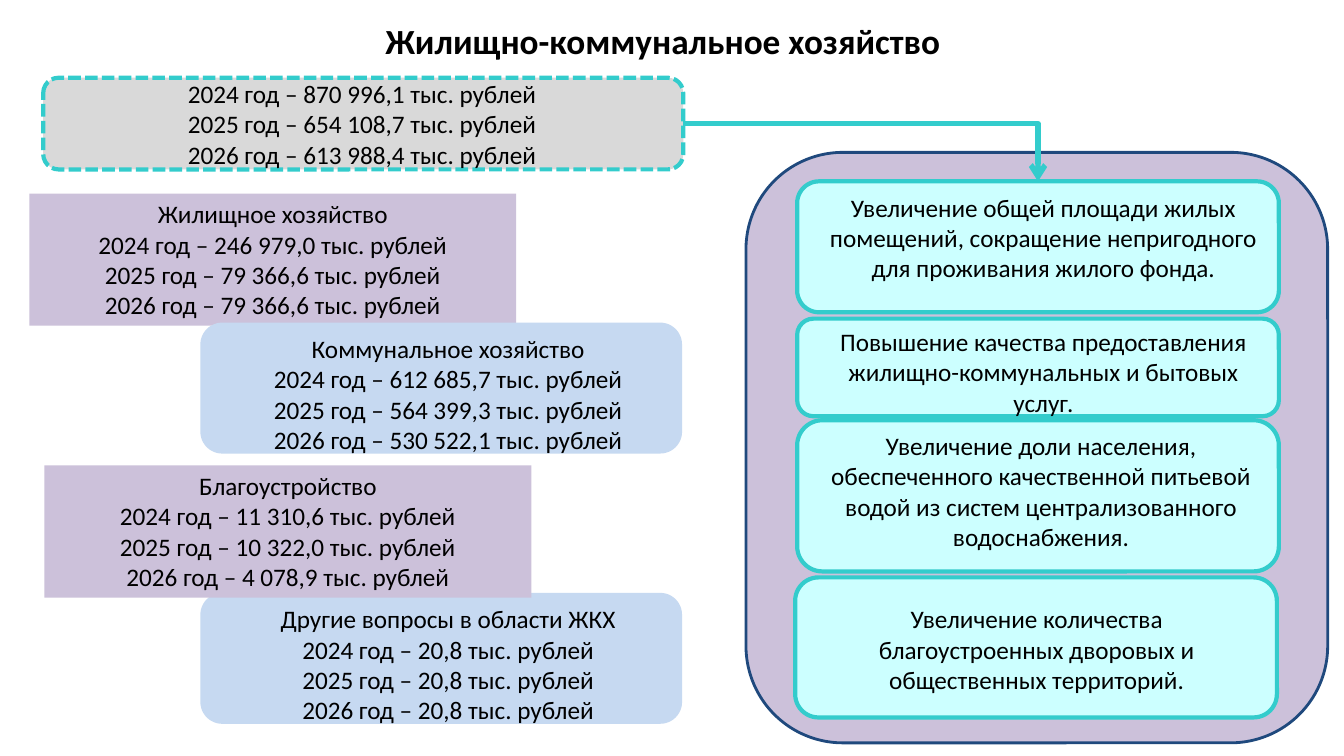
from dataclasses import dataclass

from lxml.etree import SubElement
from pptx import Presentation
from pptx.dml.color import RGBColor
from pptx.enum.dml import MSO_LINE
from pptx.enum.shapes import MSO_CONNECTOR, MSO_SHAPE
from pptx.enum.text import MSO_ANCHOR, PP_ALIGN
from pptx.oxml.ns import qn
from pptx.shapes.autoshape import Shape
from pptx.slide import Slide
from pptx.text.text import TextFrame
from pptx.util import Cm, Pt

FONT = "Calibri"
BLACK, GREY, TEAL, AQUA = "000000", "D9D9D9", "33CCCC", "CCFFFF"
LILAC, BLUE, NAVY = "CCC1DA", "C6D9F1", "1F497D"
ROUND, RECT = MSO_SHAPE.ROUNDED_RECTANGLE, MSO_SHAPE.RECTANGLE
CARD_W, CARD_H = 12.14, 3.3
SUM_W, SUM_H = 12.27, 3.33
GOAL_X, SECTOR_X, SECTOR_TEXT_X = 20.09, 5.05, 5.16


@dataclass(frozen=True)
class Box:
    """A block in centimetres; without a fill it is a plain text box."""
    left: float
    top: float
    wide: float
    high: float
    rows: tuple[str, ...] = ()
    fill: str = ""
    edge: str = ""
    form: MSO_SHAPE = ROUND
    thick: float = 3
    dash: bool = False


def color(code: str) -> RGBColor:
    return RGBColor.from_string(code)


def sums(*costs: str) -> tuple[str, ...]:
    """One line for each budget year."""
    return tuple(f"{year} год – {cost} тыс. рублей"
                 for year, cost in enumerate(costs, 2024))


def write(frame: TextFrame, rows: tuple[str, ...], size: float = 18,
          bold: bool = False) -> None:
    frame.word_wrap = True
    for i, row in enumerate(rows):
        para = frame.paragraphs[0] if i == 0 else frame.add_paragraph()
        para.alignment = PP_ALIGN.CENTER
        run = para.add_run()
        run.text = row
        run.font.name, run.font.size, run.font.bold = FONT, Pt(size), bold
        run.font.color.rgb = color(BLACK)


def draw(slide: Slide, box: Box) -> Shape:
    place = [Cm(n) for n in (box.left, box.top, box.wide, box.high)]
    if box.fill:
        shape = slide.shapes.add_shape(box.form, *place)
        shape.shadow.inherit = False
        shape.fill.solid()
        shape.fill.fore_color.rgb = color(box.fill)
        if box.edge:
            shape.line.color.rgb = color(box.edge)
            shape.line.width = Pt(box.thick)
            if box.dash:
                shape.line.dash_style = MSO_LINE.SQUARE_DOT
        else:
            shape.line.fill.background()
    else:
        shape = slide.shapes.add_textbox(*place)
    if box.rows:
        shape.text_frame.vertical_anchor = MSO_ANCHOR.TOP
        write(shape.text_frame, box.rows)
    return shape


def link(slide: Slide, start: Shape, end: Shape) -> None:
    """Arrow with one bend, from the right side of start to the top of end."""
    arrow = slide.shapes.add_connector(MSO_CONNECTOR.ELBOW, 0, 0, 0, 0)
    arrow.begin_connect(start, 3)
    arrow.end_connect(end, 0)
    arrow.line.color.rgb = color(TEAL)
    arrow.line.width = Pt(3.75)
    props = arrow.element.spPr
    props.find(qn("a:prstGeom")).set("prst", "bentConnector2")
    SubElement(props.find(qn("a:ln")), qn("a:tailEnd"), type="arrow")
    SubElement(props, qn("a:effectLst"))


PANEL = Box(18.8, 3.84, 14.66, 14.88, fill=LILAC, edge=NAVY, thick=2)
TOTAL = Box(1.09, 1.96, 16.13, 2.31, fill=GREY, edge=TEAL, dash=True)
GOAL = Box(GOAL_X, 4.57, CARD_W, CARD_H, fill=AQUA, edge=TEAL)
PARTS = (
    Box(2.84, 1.85, 12.57, 2.57, sums("870 996,1", "654 108,7", "613 988,4")),
    Box(0.74, 4.88, SUM_W, SUM_H,
        ("Жилищное хозяйство", *sums("246 979,0", "79 366,6", "79 366,6")),
        LILAC, form=RECT),
    Box(SECTOR_X, 8.13, CARD_W, CARD_H, fill=BLUE),
    Box(SECTOR_X, 14.94, CARD_W, CARD_H, fill=BLUE),
    Box(SECTOR_TEXT_X, 8.28, SUM_W, SUM_H,
        ("Коммунальное хозяйство",
         *sums("612 685,7", "564 399,3", "530 522,1"))),
    Box(1.12, 11.73, SUM_W, SUM_H,
        ("Благоустройство", *sums("11 310,6", "10 322,0", "4 078,9")),
        LILAC, form=RECT),
    Box(SECTOR_TEXT_X, 15.09, SUM_W, SUM_H,
        ("Другие вопросы в области ЖКХ", *sums("20,8", "20,8", "20,8"))),
    Box(20.35, 4.72, 11.89, 2.57,
        ("Увеличение общей площади жилых помещений, сокращение "
         "непригодного для проживания жилого фонда.",)),
    Box(GOAL_X, 8.03, CARD_W, 2.46, fill=AQUA, edge=TEAL),
    Box(GOAL_X, 10.59, CARD_W, 3.81, fill=AQUA, edge=TEAL),
    Box(20.04, 14.55, CARD_W, 3.53, fill=AQUA, edge=TEAL),
    Box(20.55, 15.09, 11.15, 2.57,
        ("Увеличение количества благоустроенных дворовых и "
         "общественных территорий.",)),
    Box(20.35, 8.1, 11.89, 2.57,
        ("Повышение качества предоставления жилищно-коммунальных "
         "и бытовых услуг.",)),
    Box(20.29, 10.72, 11.89, SUM_H,
        ("Увеличение доли населения, обеспеченного качественной питьевой "
         "водой из систем централизованного водоснабжения.",)),
)


def main() -> None:
    deck = Presentation()
    deck.slide_width, deck.slide_height = Cm(33.87), Cm(19.05)
    slide = deck.slides.add_slide(deck.slide_layouts[5])

    title = slide.shapes.title
    title.left, title.top = Cm(1.47), Cm(0.33)
    title.width, title.height = Cm(30.48), Cm(1.4)
    title.text_frame.vertical_anchor = MSO_ANCHOR.MIDDLE
    write(title.text_frame, ("Жилищно-коммунальное хозяйство",), 25.2, True)

    draw(slide, PANEL)
    goal = draw(slide, GOAL)
    total = draw(slide, TOTAL)
    for part in PARTS:
        draw(slide, part)
    link(slide, total, goal)
    deck.save("out.pptx")


if __name__ == "__main__":
    main()
